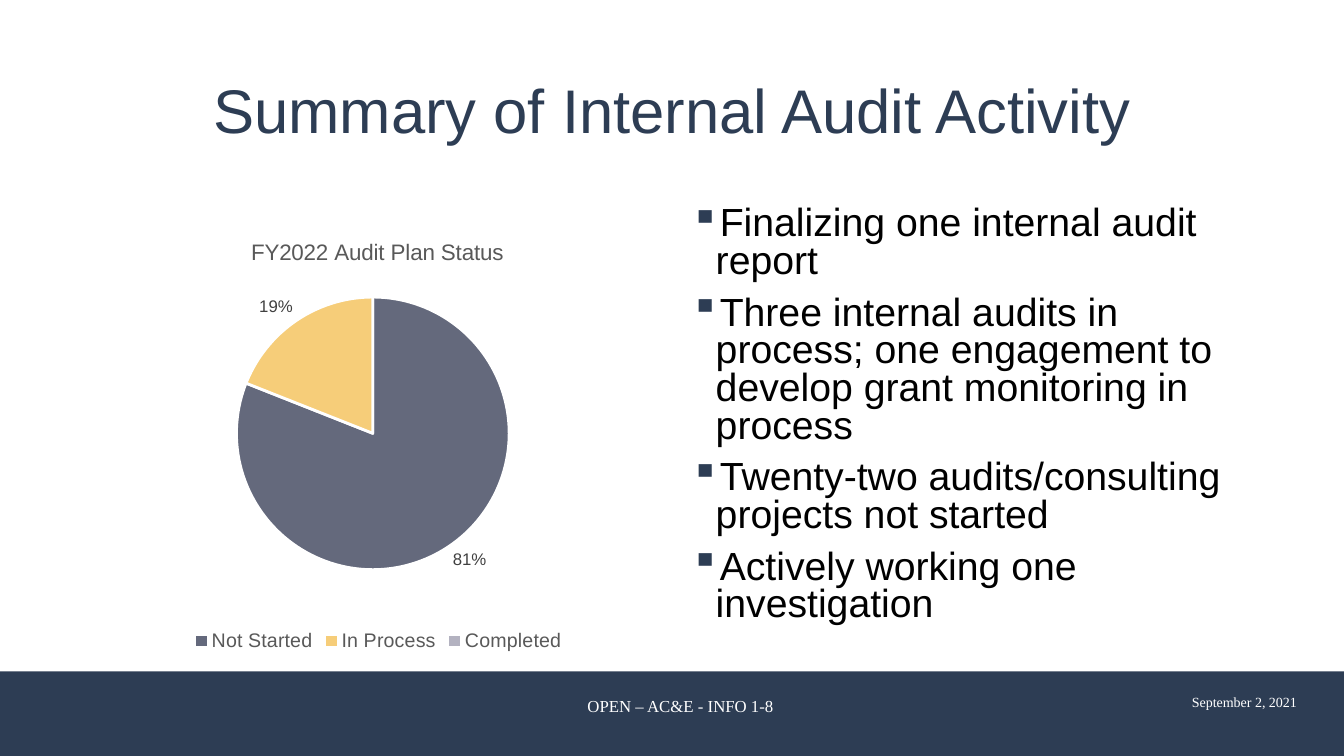
from dataclasses import dataclass

from lxml import etree
from pptx import Presentation
from pptx.chart.data import CategoryChartData
from pptx.dml.color import RGBColor
from pptx.enum.chart import XL_CHART_TYPE, XL_LABEL_POSITION, XL_LEGEND_POSITION
from pptx.enum.shapes import MSO_SHAPE
from pptx.enum.text import MSO_ANCHOR, PP_ALIGN
from pptx.oxml.ns import qn
from pptx.util import Inches, Pt

PIE = XL_CHART_TYPE.PIE
OUTSIDE_END = XL_LABEL_POSITION.OUTSIDE_END
LEGEND_BOTTOM = XL_LEGEND_POSITION.BOTTOM
RECTANGLE = MSO_SHAPE.RECTANGLE
MIDDLE = MSO_ANCHOR.MIDDLE
LEFT, CENTER, RIGHT = PP_ALIGN.LEFT, PP_ALIGN.CENTER, PP_ALIGN.RIGHT


@dataclass(frozen=True)
class Theme:
    """Colours, fonts and type sizes of the deck."""
    navy: str = "2D3D54"
    white: str = "FFFFFF"
    black: str = "000000"
    grey: str = "595959"
    label_grey: str = "404040"
    slices: tuple = ("64697C", "F6CD79", "B3B2C0")
    font: str = "Arial"
    footer_font: str = "Times New Roman"
    title: int = 44
    body: int = 28
    chart_title: int = 16
    legend: int = 14
    label: int = 12
    footer: int = 12
    date: int = 10


class SlideBuilder:
    """Adds styled elements to one slide, placed in percent of its size."""

    def __init__(self, presentation, theme):
        """Open a title-only slide."""
        self.theme = theme
        self.width = presentation.slide_width
        self.height = presentation.slide_height
        self.slide = presentation.slides.add_slide(presentation.slide_layouts[5])

    def place(self, left, top, width, height):
        """Turn percentages into slide lengths."""
        return (int(self.width * left / 100), int(self.height * top / 100),
                int(self.width * width / 100), int(self.height * height / 100))

    def style(self, font, size, color, name=None):
        """Set the size, colour and typeface of a font."""
        font.size = Pt(size)
        font.name = name or self.theme.font
        font.bold = False
        font.color.rgb = RGBColor.from_string(color)

    def title(self, text, box):
        """Fill and format the title placeholder."""
        shape = self.slide.shapes.title
        shape.left, shape.top, shape.width, shape.height = self.place(*box)
        frame = shape.text_frame
        frame.text = text
        frame.vertical_anchor = MIDDLE
        paragraph = frame.paragraphs[0]
        paragraph.alignment = CENTER
        paragraph.line_spacing = 0.9
        self.style(paragraph.runs[0].font, self.theme.title, self.theme.navy)

    def band(self, box):
        """Draw a plain filled rectangle."""
        shape = self.slide.shapes.add_shape(RECTANGLE, *self.place(*box))
        shape.shadow.inherit = False
        shape.fill.solid()
        shape.fill.fore_color.rgb = RGBColor.from_string(self.theme.navy)
        shape.line.fill.background()

    def footer(self, text, box, size, alignment):
        """Write one line on the footer band."""
        frame = self.slide.shapes.add_textbox(*self.place(*box)).text_frame
        frame.word_wrap = True
        frame.text = text
        paragraph = frame.paragraphs[0]
        paragraph.alignment = alignment
        self.style(paragraph.runs[0].font, size, self.theme.white, self.theme.footer_font)

    def bullets(self, items, box):
        """Write a list with square bullets."""
        frame = self.slide.shapes.add_textbox(*self.place(*box)).text_frame
        frame.word_wrap = True
        for index, item in enumerate(items):
            paragraph = frame.add_paragraph() if index else frame.paragraphs[0]
            paragraph.text = item
            properties = paragraph._p.get_or_add_pPr()
            properties.set("marL", str(Inches(0.25)))
            properties.set("indent", str(-Inches(0.25)))
            color = etree.SubElement(properties, qn("a:buClr"))
            etree.SubElement(color, qn("a:srgbClr"), val=self.theme.navy)
            etree.SubElement(properties, qn("a:buChar"), char="▪")
            paragraph.alignment = LEFT
            paragraph.line_spacing = 0.8
            paragraph.space_before = Pt(10 if index else 0)
            self.style(paragraph.runs[0].font, self.theme.body, self.theme.black)

    def chart_layout(self, parent, position, **shares):
        """Pin a chart part at shares of the chart's size."""
        for old in parent.findall(qn("c:layout")):
            parent.remove(old)
        layout = etree.Element(qn("c:layout"))
        manual = etree.SubElement(layout, qn("c:manualLayout"))
        if "w" in shares:
            etree.SubElement(manual, qn("c:layoutTarget"), val="inner")
        for axis in ("x", "y"):
            etree.SubElement(manual, qn(f"c:{axis}Mode"), val="edge")
        for name, share in shares.items():
            etree.SubElement(manual, qn(f"c:{name}"), val=str(share))
        parent.insert(position, layout)

    def pie(self, title, values, box):
        """Add a pie chart with percent labels and a legend."""
        theme = self.theme
        data = CategoryChartData()
        data.categories = list(values)
        data.add_series("Series 1", list(values.values()))
        chart = self.slide.shapes.add_chart(PIE, *self.place(*box), data).chart
        self.style(chart.font, theme.date, theme.black)

        chart.has_title = True
        chart.chart_title.text_frame.text = title
        run = chart.chart_title.text_frame.paragraphs[0].runs[0]
        self.style(run.font, theme.chart_title, theme.grey)
        self.chart_layout(chart.chart_title._element, 1, x=0.27, y=0.07)

        chart.has_legend = True
        chart.legend.position = LEGEND_BOTTOM
        chart.legend.include_in_layout = False
        self.style(chart.legend.font, theme.legend, theme.grey)

        plot = chart.plots[0]
        plot.vary_by_categories = True
        self.chart_layout(plot._element.getparent(), 0, x=0.08, y=0.21, w=0.82, h=0.6)
        series = plot.series[0]
        for index, color in enumerate(theme.slices):
            slice_format = series.points[index].format
            slice_format.fill.solid()
            slice_format.fill.fore_color.rgb = RGBColor.from_string(color)
            slice_format.line.color.rgb = RGBColor.from_string(theme.white)
            slice_format.line.width = Pt(2)
        completed = series._element.findall(qn("c:dPt"))[-1]
        explosion = etree.Element(qn("c:explosion"), val="24")
        completed.find(qn("c:spPr")).addprevious(explosion)

        labels = series.data_labels
        labels.show_percentage = True
        labels.show_value = False
        labels.number_format = "0%;;"
        labels.number_format_is_linked = False
        labels.position = OUTSIDE_END
        self.style(labels.font, theme.label, theme.label_grey)


def main():
    """Build and save the audit summary slide."""
    presentation = Presentation()
    presentation.slide_width = Inches(13.33)
    presentation.slide_height = Inches(7.5)
    theme = Theme()
    builder = SlideBuilder(presentation, theme)
    builder.band((0, 88.8, 100, 11.2))
    builder.footer("September 2, 2021", (83.8, 91.07, 13.43, 3.6), theme.date, RIGHT)
    builder.footer("OPEN – AC&E - INFO 1-8", (38.56, 91.33, 24.16, 4), theme.footer, CENTER)
    builder.title("Summary of Internal Audit Activity", (6.9, 5.33, 86.27, 19.33))
    builder.bullets((
        "Finalizing one internal audit report",
        "Three internal audits in process; one engagement to develop grant monitoring in process",
        "Twenty-two audits/consulting projects not started",
        "Actively working one investigation",
    ), (50.64, 26.67, 42.54, 60.13))
    builder.pie("FY2022 Audit Plan Status",
                {"Not Started": 81, "In Process": 19, "Completed": 0},
                (6.9, 26.67, 42.54, 60.13))
    presentation.save("out.pptx")


if __name__ == "__main__":
    main()
